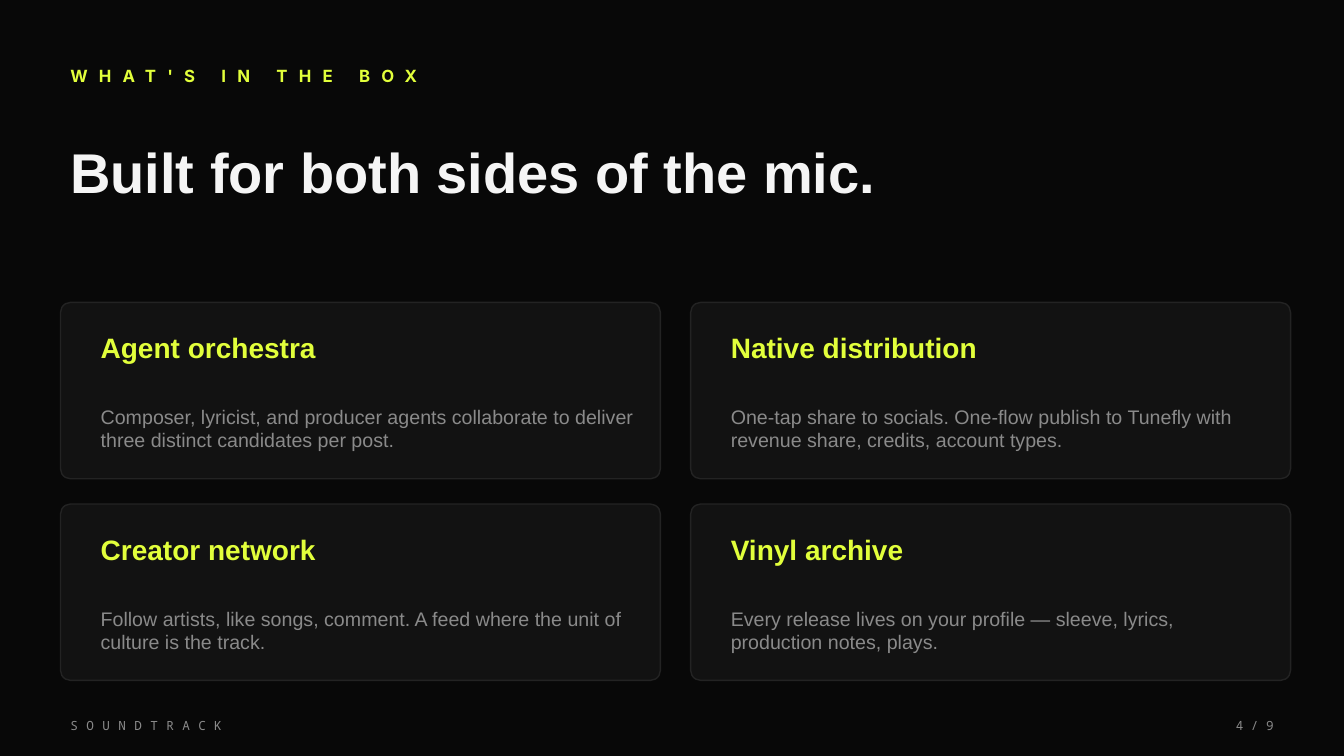
from dataclasses import dataclass

from pptx import Presentation
from pptx.dml.color import RGBColor
from pptx.enum.shapes import MSO_SHAPE
from pptx.enum.text import MSO_ANCHOR, PP_ALIGN
from pptx.util import Pt

PX = 9144  # EMU per px, 100 px to the inch


@dataclass(frozen=True)
class TextStyle:
    font: str
    size: int
    color: str
    bold: bool = False
    spacing: int = 0  # points between letters


class Theme:
    background = "080808"
    card_fill = "121212"
    card_line = "232323"
    accent = "E2FF3B"
    muted = "8A8A8A"
    eyebrow = TextStyle("Inter", 12, accent, True, 8)
    headline = TextStyle("Arial", 40, "F5F5F5", True)
    card_title = TextStyle("Arial", 20, accent, True)
    card_body = TextStyle("Arial", 14, muted)
    footer_name = TextStyle("Noto Sans Mono", 9, muted, spacing=6)
    page_number = TextStyle("Noto Sans Mono", 9, muted)


FEATURES = [
    ("Agent orchestra",
     "Composer, lyricist, and producer agents collaborate to deliver "
     "three distinct candidates per post."),
    ("Native distribution",
     "One-tap share to socials. One-flow publish to Tunefly with "
     "revenue share, credits, account types."),
    ("Creator network",
     "Follow artists, like songs, comment. A feed where the unit of "
     "culture is the track."),
    ("Vinyl archive",
     "Every release lives on your profile — sleeve, lyrics, "
     "production notes, plays."),
]


def emu(*lengths):
    return [length * PX for length in lengths]


def rgb(color):
    return RGBColor.from_string(color)


def add_text(slide, box, text, style, align=PP_ALIGN.LEFT):
    frame = slide.shapes.add_textbox(*emu(*box)).text_frame
    frame.word_wrap = True
    frame.vertical_anchor = MSO_ANCHOR.MIDDLE
    paragraph = frame.paragraphs[0]
    paragraph.alignment = align
    run = paragraph.add_run()
    run.text = text
    font = paragraph.font
    font.name = style.font
    font.size = Pt(style.size)
    font.bold = style.bold
    font.color.rgb = rgb(style.color)
    if style.spacing:
        run._r.get_or_add_rPr().set("spc", str(style.spacing * 100))


def add_header(slide, box):
    left, top, width, _ = box
    add_text(slide, (left, top, width, 40), "WHAT'S IN THE BOX", Theme.eyebrow)
    add_text(slide, (left, top + 65, width, 100),
             "Built for both sides of the mic.", Theme.headline)


def add_card(slide, box, title, body):
    left, top, width, height = box
    card = slide.shapes.add_shape(MSO_SHAPE.ROUNDED_RECTANGLE, *emu(*box))
    card.adjustments[0] = 10 / height  # 10 px corner radius
    card.shadow.inherit = False
    card.fill.solid()
    card.fill.fore_color.rgb = rgb(Theme.card_fill)
    card.line.color.rgb = rgb(Theme.card_line)
    card.line.width = Pt(1)

    text_left, text_width = left + 30, width - 45
    add_text(slide, (text_left, top + 20, text_width, 50), title, Theme.card_title)
    add_text(slide, (text_left, top + 75, text_width, 100), body, Theme.card_body)


def add_feature_grid(slide, box, columns=2, gap_x=30, gap_y=25):
    left, top, width, height = box
    rows = len(FEATURES) // columns
    card_width = (width - gap_x * (columns - 1)) // columns
    card_height = (height - gap_y * (rows - 1)) // rows
    for index, (title, body) in enumerate(FEATURES):
        row, column = divmod(index, columns)
        card_box = (left + column * (card_width + gap_x),
                    top + row * (card_height + gap_y),
                    card_width, card_height)
        add_card(slide, card_box, title, body)


def add_footer(slide, box):
    left, top, width, height = box
    add_text(slide, (left, top, 400, height), "SOUNDTRACK", Theme.footer_name)
    add_text(slide, (left + width - 100, top, 100, height), "4 / 9",
             Theme.page_number, PP_ALIGN.RIGHT)


def main():
    deck = Presentation()
    deck.slide_width, deck.slide_height = emu(1333, 750)
    slide = deck.slides.add_slide(deck.slide_layouts[6])
    background = slide.background.fill
    background.solid()
    background.fore_color.rgb = rgb(Theme.background)

    add_header(slide, (60, 55, 1200, 165))
    add_feature_grid(slide, (60, 300, 1220, 375))
    add_footer(slide, (60, 705, 1213, 30))
    deck.save("out.pptx")


if __name__ == "__main__":
    main()
